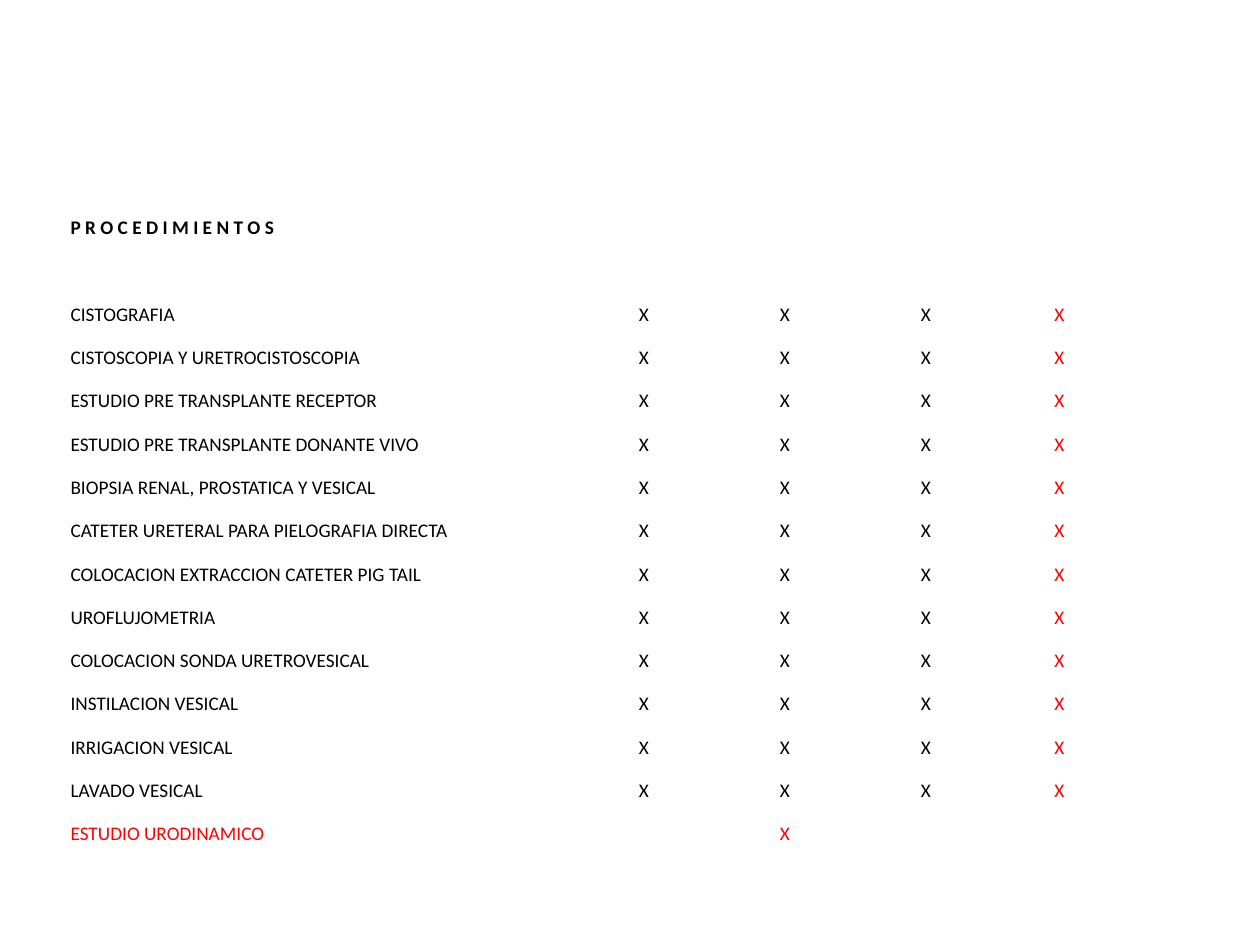
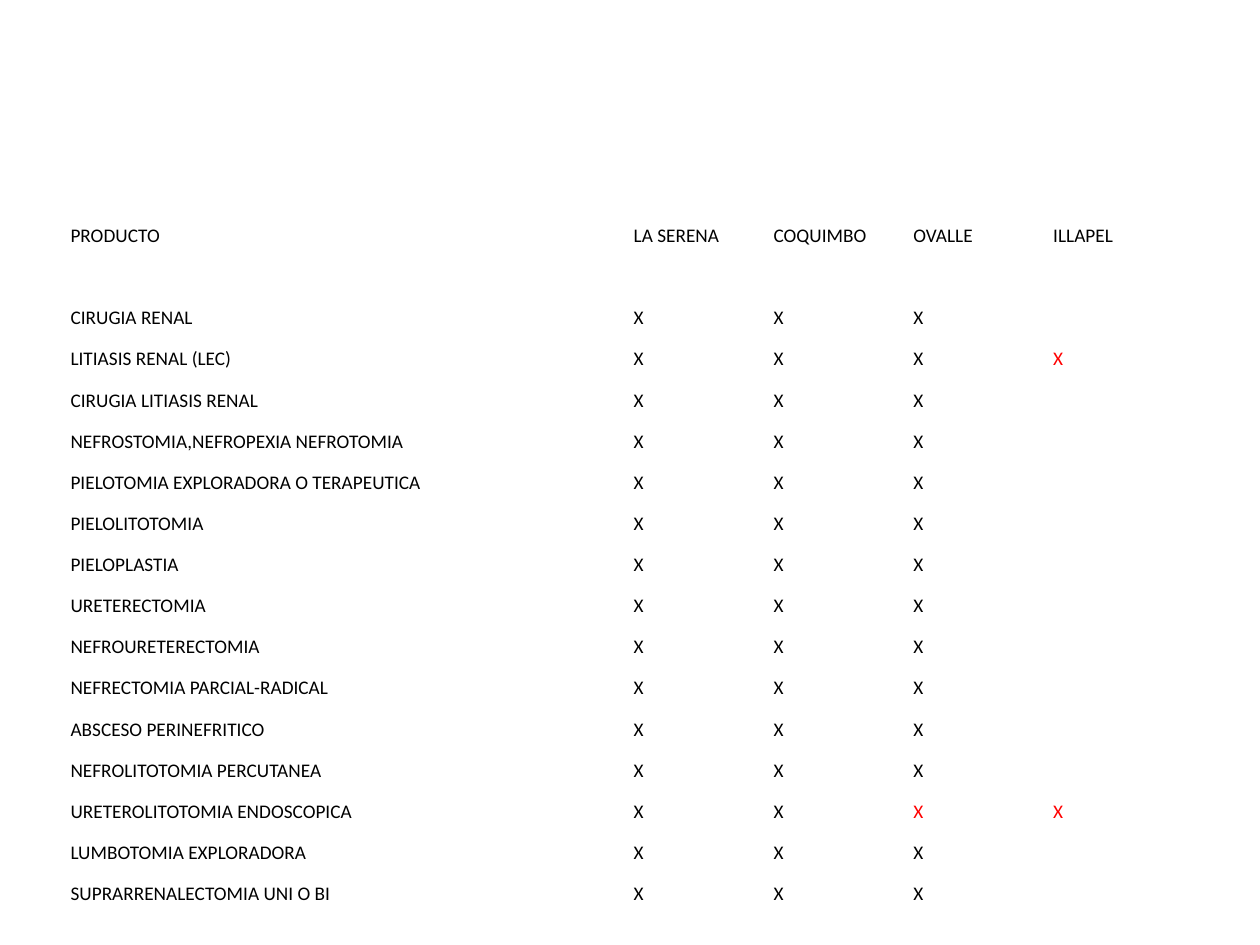
from dataclasses import dataclass

from pptx import Presentation
from pptx import util as u
from pptx.dml.color import RGBColor
from pptx.enum import text


@dataclass(frozen=True)
class Theme:
    font: str = "Calibri"
    size: int = 11
    black: str = "000000"
    red: str = "FF0000"


theme = Theme()
inks = {"k": theme.black, "r": theme.red}


def write_cell(cell, value, ink, bold):
    """Style one cell; the ink "-" leaves it empty."""
    cell.fill.background()
    cell.vertical_anchor = text.MSO_ANCHOR.BOTTOM
    cell.margin_left = cell.margin_right = cell.margin_top = u.Inches(0.01)
    cell.margin_bottom = 0
    if ink == "-":
        return
    r = cell.text_frame.paragraphs[0].add_run()
    r.text = value
    r.font.name = theme.font
    r.font.size = u.Pt(theme.size)
    r.font.bold = bold
    r.font.color.rgb = RGBColor.from_string(inks[ink])


def add_matrix(s, left, top, height, widths, heading, rows):
    """Place a heading row, an empty row and the rows of (label, inks per column)."""
    count = len(rows) + 2
    frame = s.shapes.add_table(count, len(widths), u.Inches(left), u.Inches(top),
                               u.Inches(sum(widths)), u.Inches(height))
    table = frame.table
    table.first_row = table.horz_banding = False
    for column, width in zip(table.columns, widths):
        column.width = u.Inches(width)
    for row in table.rows:
        row.height = u.Inches(height / count)

    head_inks = "".join("k" if name else "-" for name in heading)
    lines = [(heading, head_inks), ([""] * 5, "-----")]
    lines += [([label] + ["X"] * 4, pattern) for label, pattern in rows]
    for i, (values, pattern) in enumerate(lines):
        bold = i == 0 and not heading[1]  # a heading that stands alone is bold
        for j, (value, ink) in enumerate(zip(values, pattern)):
            write_cell(table.cell(i, j), value, ink, bold)


# Inks per column: k black, r red, - empty
ALL_SITES = "kkkkr"
THREE_SITES = "kkkk-"

procedures = [(name, ALL_SITES) for name in (
    "CISTOGRAFIA",
    "CISTOSCOPIA Y URETROCISTOSCOPIA",
    "ESTUDIO PRE TRANSPLANTE RECEPTOR",
    "ESTUDIO PRE TRANSPLANTE DONANTE VIVO",
    "BIOPSIA RENAL, PROSTATICA Y VESICAL",
    "CATETER URETERAL PARA PIELOGRAFIA DIRECTA",
    "COLOCACION EXTRACCION CATETER PIG TAIL",
    "UROFLUJOMETRIA",
    "COLOCACION SONDA URETROVESICAL",
    "INSTILACION VESICAL",
    "IRRIGACION VESICAL",
    "LAVADO VESICAL",
)] + [("ESTUDIO URODINAMICO", "r-r--")]

surgery_exceptions = {
    "LITIASIS RENAL (LEC)": ALL_SITES,
    "URETEROLITOTOMIA ENDOSCOPICA": "kkkrr",
}
surgeries = [(name, surgery_exceptions.get(name, THREE_SITES)) for name in (
    "CIRUGIA RENAL",
    "LITIASIS RENAL (LEC)",
    "CIRUGIA LITIASIS RENAL",
    "NEFROSTOMIA,NEFROPEXIA NEFROTOMIA",
    "PIELOTOMIA EXPLORADORA O TERAPEUTICA",
    "PIELOLITOTOMIA",
    "PIELOPLASTIA",
    "URETERECTOMIA",
    "NEFROURETERECTOMIA",
    "NEFRECTOMIA PARCIAL-RADICAL",
    "ABSCESO PERINEFRITICO",
    "NEFROLITOTOMIA PERCUTANEA",
    "URETEROLITOTOMIA ENDOSCOPICA",
    "LUMBOTOMIA EXPLORADORA",
    "SUPRARRENALECTOMIA UNI O BI",
)]

prs = Presentation()
prs.slide_width, prs.slide_height = u.Inches(10), u.Inches(7.5)
blank = prs.slide_layouts[6]

s = prs.slides.add_slide(blank)
add_matrix(s, 0.55, 1.56, 5.16, [4.51, 1.12, 1.12, 1.06, 1.17],
           ["P R O C E D I M I E N T O S", "", "", "", ""], procedures)

s = prs.slides.add_slide(blank)
add_matrix(s, 0.55, 1.64, 5.55, [4.47] + [1.11] * 4,
           ["PRODUCTO", "LA SERENA", "COQUIMBO", "OVALLE", "ILLAPEL"], surgeries)

prs.save("out.pptx")
